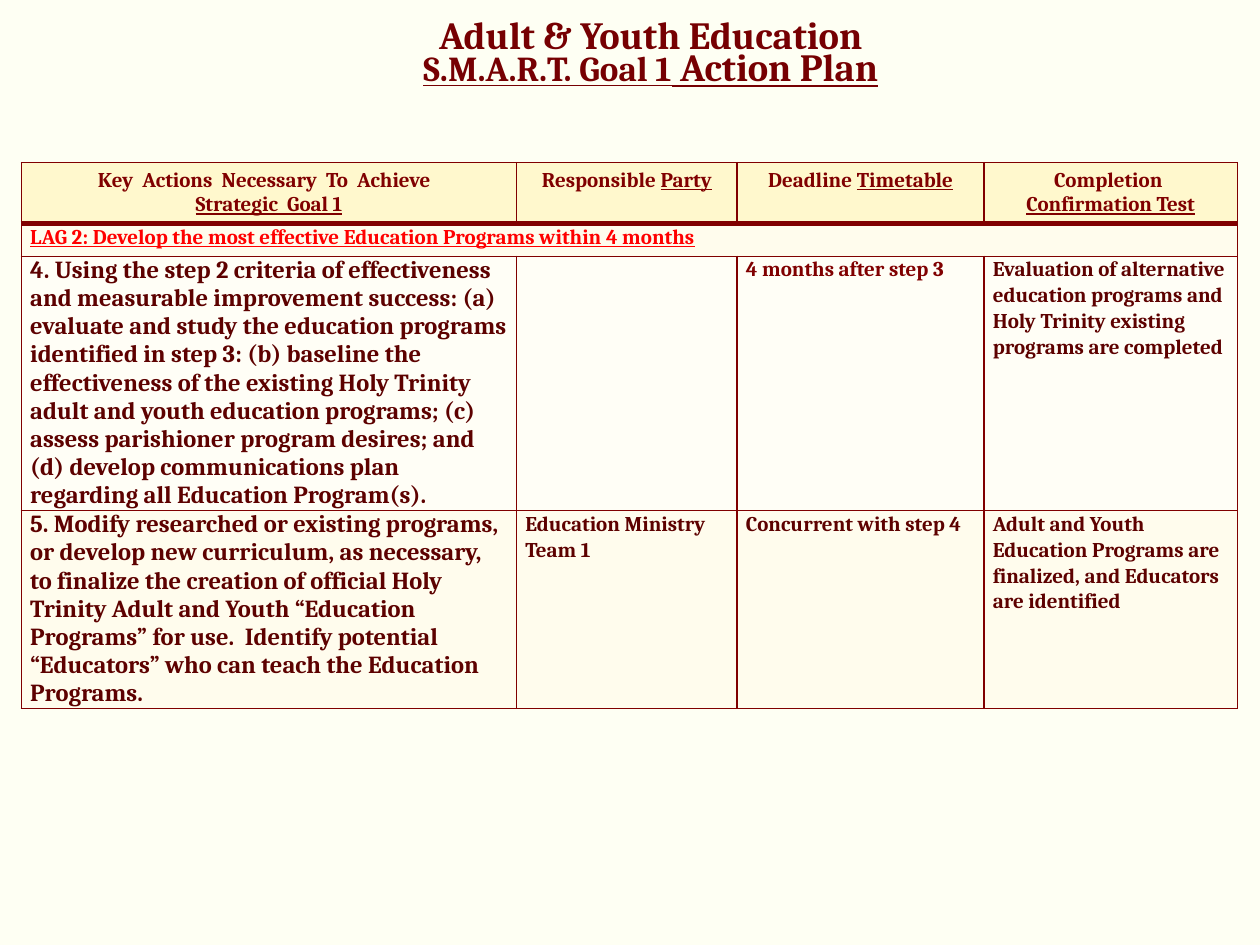
from dataclasses import dataclass

from lxml import etree
from pptx import Presentation
from pptx.dml.color import RGBColor
from pptx.enum.text import MSO_ANCHOR, PP_ALIGN
from pptx.oxml.ns import qn
from pptx.util import Inches, Pt

CENTER = PP_ALIGN.CENTER
MIDDLE = MSO_ANCHOR.MIDDLE
FONT = "Cambria"
COLORS = {
    "page": "FEFFF3",
    "header": "FFF8CD",
    "band_dark": "FFFCED",
    "band_light": "FFFEF6",
    "maroon": "800000",
    "title": "760002",
    "body": "5D0100",
    "goal": "FF0000",
}
COLUMN_WIDTHS = [3.93, 1.75, 1.96, 2.01]
ROW_HEIGHTS = [0.48, 0.26, 2.02, 1.57]


@dataclass
class TextPart:
    text: str
    underline: bool = False
    size: float = 12
    color: str = "maroon"


@dataclass
class Action:
    """One table row: the action, who does it, by when, and how it is confirmed."""
    texts: list[str]
    fill: str
    deadline_color: str = "body"


HEADERS = [
    [[TextPart("Key  Actions  Necessary  To  Achieve  ")], [TextPart("Strategic  Goal 1", True)]],
    [[TextPart("Responsible "), TextPart("Party", True)]],
    [[TextPart("Deadline "), TextPart("Timetable", True)]],
    [[TextPart("Completion ")], [TextPart("Confirmation Test", True)]],
]
GOAL = TextPart("LAG 2: Develop the most effective Education Programs within 4 months", True, color="goal")
ACTIONS = [
    Action([
        "4. Using the step 2 criteria of effectiveness and measurable improvement success: "
        "(a) evaluate and study the education programs identified in step 3: (b) baseline the "
        "effectiveness of the existing Holy Trinity adult and youth education programs; "
        "(c) assess parishioner program desires; and (d) develop communications plan regarding "
        "all Education Program(s).",
        "",
        "4 months after step 3",
        "Evaluation of alternative education programs and Holy Trinity existing programs are completed",
    ], "band_light", "maroon"),
    Action([
        "5. Modify researched or existing programs, or develop new curriculum, as necessary, to "
        "finalize the creation of official Holy Trinity Adult and Youth “Education Programs” for "
        "use.  Identify potential “Educators” who can teach the Education Programs.",
        "Education Ministry Team 1",
        "Concurrent with step 4",
        "Adult and Youth Education Programs are finalized, and Educators are identified",
    ], "band_dark"),
]


def rgb(name: str) -> RGBColor:
    return RGBColor.from_string(COLORS[name])


def add_part(p, part: TextPart) -> None:
    r = p.add_run()
    r.text = part.text
    r.font.name = FONT
    r.font.size = Pt(part.size)
    r.font.bold = True
    r.font.underline = part.underline
    r.font.color.rgb = rgb(part.color)


def style_cell(cell, fill: str, top: float = 1, bottom: float = 1) -> None:
    """Draw the four borders, then the fill, in the order the file format requires."""
    tc_pr = cell._tc.get_or_add_tcPr()
    for side, width in (("L", 1), ("R", 1), ("T", top), ("B", bottom)):
        ln = etree.SubElement(tc_pr, qn(f"a:ln{side}"), w=str(Pt(width)))
        solid = etree.SubElement(ln, qn("a:solidFill"))
        etree.SubElement(solid, qn("a:srgbClr"), val=COLORS["maroon"])
    cell.fill.solid()
    cell.fill.fore_color.rgb = rgb(fill)


def fill_body_cell(cell, part: TextPart, spacing: float) -> None:
    cell.margin_left = cell.margin_right = Inches(0.07)
    cell.margin_top = cell.margin_bottom = 0
    p = cell.text_frame.paragraphs[0]
    p.line_spacing = spacing
    if part.text:
        add_part(p, part)


def add_action_table(s) -> None:
    table = s.shapes.add_table(
        len(ROW_HEIGHTS), len(COLUMN_WIDTHS), Inches(0.17), Inches(1.29),
        Inches(sum(COLUMN_WIDTHS)), Inches(sum(ROW_HEIGHTS))).table
    for column, width in zip(table.columns, COLUMN_WIDTHS):
        column.width = Inches(width)
    for row, height in zip(table.rows, ROW_HEIGHTS):
        row.height = Inches(height)

    for col, paragraphs in enumerate(HEADERS):
        cell = table.cell(0, col)
        style_cell(cell, "header", bottom=3)
        style_cell(table.cell(1, col), "band_dark", top=3)
        tf = cell.text_frame
        for i, parts in enumerate(paragraphs):
            p = tf.add_paragraph() if i else tf.paragraphs[0]
            p.alignment = CENTER
            for part in parts:
                add_part(p, part)

    table.cell(1, 0).merge(table.cell(1, len(COLUMN_WIDTHS) - 1))
    fill_body_cell(table.cell(1, 0), GOAL, 1.07)

    for row, action in enumerate(ACTIONS, start=2):
        colors = ["body", "body", action.deadline_color, "body"]
        for col, (text, color) in enumerate(zip(action.texts, colors)):
            cell = table.cell(row, col)
            style_cell(cell, action.fill)
            size, spacing = (12, 1.07) if col else (14, 1)
            fill_body_cell(cell, TextPart(text, size=size, color=color), spacing)


def add_title(s) -> None:
    tf = s.shapes.add_textbox(Inches(0.25), Inches(-0.18), Inches(9.83), Inches(1.25)).text_frame
    tf.word_wrap = True
    tf.vertical_anchor = MIDDLE
    p = tf.paragraphs[0]
    p.alignment = CENTER
    p.line_spacing = 0.7
    add_part(p, TextPart("Adult & Youth Education", size=22, color="title"))
    p.add_line_break()
    add_part(p, TextPart("S.M.A.R.T. Goal 1", True, 20, "title"))
    add_part(p, TextPart(" Action Plan", True, 22, "title"))


def main() -> None:
    prs = Presentation()
    prs.slide_width, prs.slide_height = Inches(10), Inches(7.5)
    s = prs.slides.add_slide(prs.slide_layouts[6])
    s.background.fill.solid()
    s.background.fill.fore_color.rgb = rgb("page")
    add_action_table(s)
    add_title(s)
    prs.save("out.pptx")


if __name__ == "__main__":
    main()
